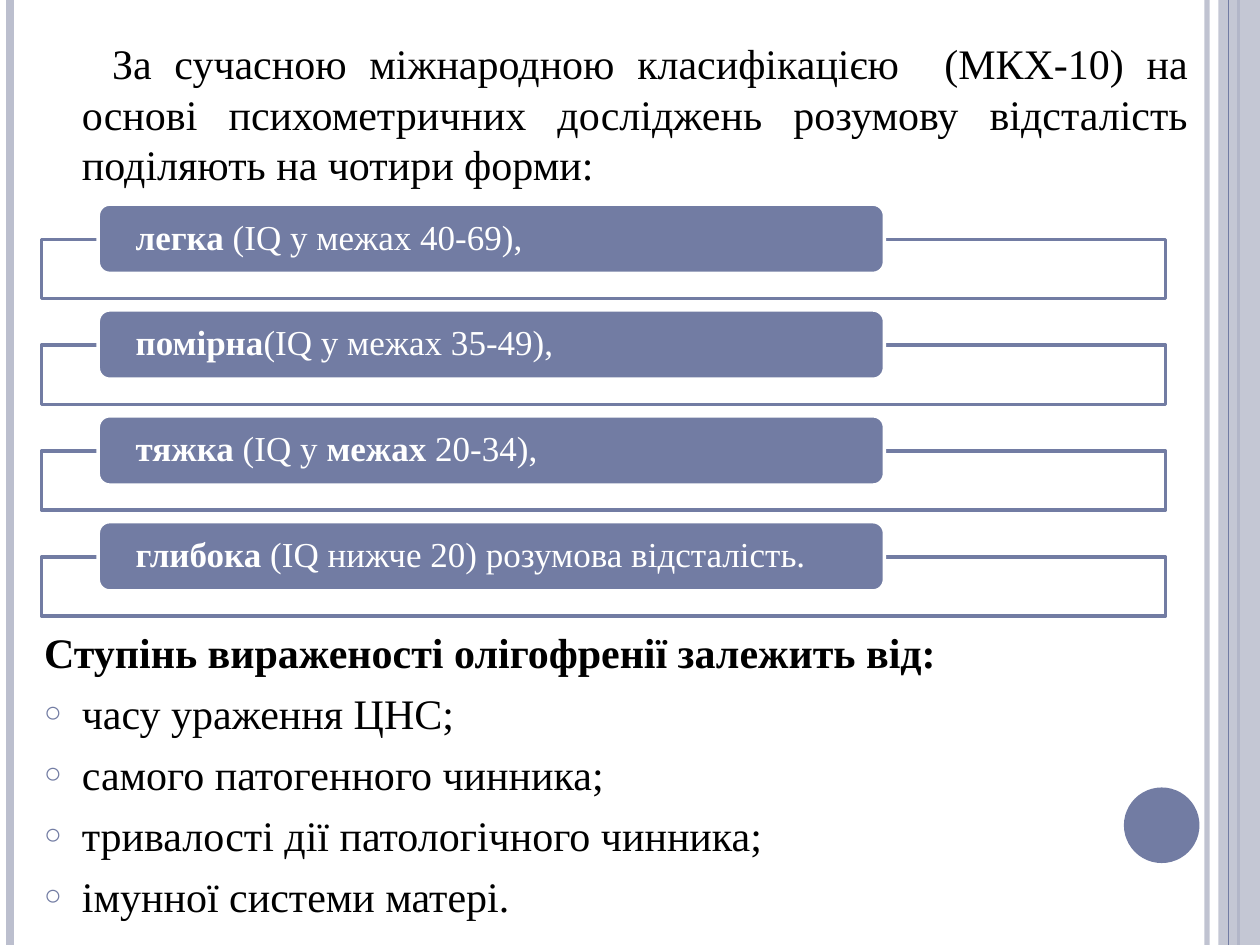
from pptx import Presentation
from pptx.dml.color import RGBColor
from pptx.enum.shapes import MSO_CONNECTOR, MSO_SHAPE as SHAPE
from pptx.enum.text import MSO_ANCHOR, MSO_AUTO_SIZE, PP_ALIGN
from pptx.oxml.ns import qn
from pptx.util import Inches, Pt
from lxml.etree import SubElement

FONT = "Times New Roman"
COLORS = {"accent": "727CA3", "pale": "BCBFCE", "white": "FFFFFF", "black": "000000"}
STRIPES = [(9.58, "pale", 3, 93), (0.08, "pale", 4.5, 100), (9.83, "accent", 1.5, 100)]
INTRO = (
    "За сучасною міжнародною класифікацією  (МКХ-10) на основі "
    "психометричних досліджень розумову відсталість поділяють на чотири форми:"
)
FORMS = [
    [("легка", True), (" (IQ у межах 40-69),", False)],
    [("помірна", True), ("(IQ у межах 35-49),", False)],
    [("тяжка", True), (" (IQ у ", False), ("межах", True), (" 20-34),", False)],
    [("глибока", True), (" (IQ нижче 20) розумова відсталість.", False)],
]
HEADING = "Ступінь вираженості олігофренії залежить від:"
FACTORS = [
    "часу ураження ЦНС;",
    "самого патогенного чинника;",
    "тривалості дії патологічного чинника;",
    "імунної системи матері.",
]


def rgb(name):
    """Return the named colour."""
    return RGBColor.from_string(COLORS[name])


def set_alpha(fill, percent):
    """Make a solid fill partly transparent."""
    color = fill._xPr.find(qn("a:solidFill"))[0]
    SubElement(color, qn("a:alpha"), val=str(percent * 1000))


def add_stripe(s, x, color, width, alpha=100):
    """Draw a full-height vertical line."""
    line = s.shapes.add_connector(
        MSO_CONNECTOR.STRAIGHT, Inches(x), 0, Inches(x), Inches(7.5))
    line.line.color.rgb = rgb(color)
    line.line.width = Pt(width)
    if alpha < 100:
        set_alpha(line.line.fill, alpha)
    SubElement(line._element.spPr, qn("a:effectLst"))


def add_box(s, kind, box, fill, outline=None):
    """Add a flat filled shape with an optional outline."""
    sp = s.shapes.add_shape(kind, *map(Inches, box))
    sp.shadow.inherit = False
    sp.fill.solid()
    sp.fill.fore_color.rgb = rgb(fill)
    if outline:
        sp.line.color.rgb = rgb(outline)
        sp.line.width = Pt(2)
    else:
        sp.line.fill.background()
    return sp


def format_run(r, size, color, bold=False):
    """Set the font of a run."""
    r.font.name = FONT
    r.font.size = Pt(size)
    r.font.bold = bold
    r.font.color.rgb = rgb(color)


def add_decoration(s):
    """Draw the side stripes, the right panel and the circle."""
    for stripe in STRIPES:
        add_stripe(s, *stripe)
    panel = add_box(s, SHAPE.RECTANGLE, (9.67, 0, 0.33, 7.5), "pale")
    set_alpha(panel.fill, 87)
    add_stripe(s, 9.75, "accent", 0.75)
    add_box(s, SHAPE.OVAL, (8.92, 6.25, 0.6, 0.6), "accent")


def add_form(s, top, parts):
    """Draw one form: an outlined frame with a labelled bar on its edge."""
    add_box(s, SHAPE.RECTANGLE, (0.33, top + 0.28, 8.92, 0.47), "white", "accent")
    bar = add_box(s, SHAPE.ROUNDED_RECTANGLE, (0.78, top, 6.24, 0.55), "accent", "white")
    tf = bar.text_frame
    tf.word_wrap = True
    tf.vertical_anchor = MSO_ANCHOR.MIDDLE
    tf.margin_left = tf.margin_right = Inches(0.27)
    tf.margin_top = tf.margin_bottom = 0
    p = tf.paragraphs[0]
    p.alignment = PP_ALIGN.LEFT
    p.line_spacing = 0.9
    for text, bold in parts:
        r = p.add_run()
        r.text = text
        format_run(r, 20, "white", bold)


def format_paragraph(p, indent=-0.3, before=6, bold=False, bullet=False):
    """Set indents, spacing, bullet and font of a body paragraph."""
    p.line_spacing = 1.0
    p.space_before = Pt(before)
    p.space_after = Pt(0)
    pPr = p._p.get_or_add_pPr()
    pPr.set("marL", str(Inches(0.3)))
    pPr.set("indent", str(Inches(indent)))
    if bullet:
        color = SubElement(pPr, qn("a:buClr"))
        SubElement(color, qn("a:srgbClr"), val=COLORS["accent"])
        SubElement(pPr, qn("a:buSzPct"), val="70000")
        SubElement(pPr, qn("a:buFont"), typeface=FONT)
        SubElement(pPr, qn("a:buChar"), char="○")
    else:
        SubElement(pPr, qn("a:buNone"))
    for r in p.runs:
        format_run(r, 24, "black", bold)


def fill_body(body):
    """Write the introduction, the heading and the bulleted factors."""
    body.left, body.top, body.width, body.height = map(Inches, (0.25, 0.25, 9.28, 7.25))
    tf = body.text_frame
    tf.word_wrap = True
    tf.auto_size = MSO_AUTO_SIZE.NONE
    tf.vertical_anchor = MSO_ANCHOR.TOP
    tf.text = "\n".join([INTRO, HEADING, *FACTORS])
    intro, heading, *factors = tf.paragraphs
    intro.alignment = PP_ALIGN.JUSTIFY
    format_paragraph(intro, indent=0.24)
    format_paragraph(heading, before=250, bold=True)
    for p in factors:
        format_paragraph(p, bullet=True)


def main():
    """Build the slide and save it."""
    prs = Presentation()
    prs.slide_width, prs.slide_height = Inches(10), Inches(7.5)
    s = prs.slides.add_slide(prs.slide_layouts[1])
    title = s.shapes.title._element
    title.getparent().remove(title)
    add_decoration(s)
    fill_body(s.placeholders[1])
    for i, parts in enumerate(FORMS):
        add_form(s, 1.62 + i * 0.84, parts)
    prs.save("out.pptx")


if __name__ == "__main__":
    main()
